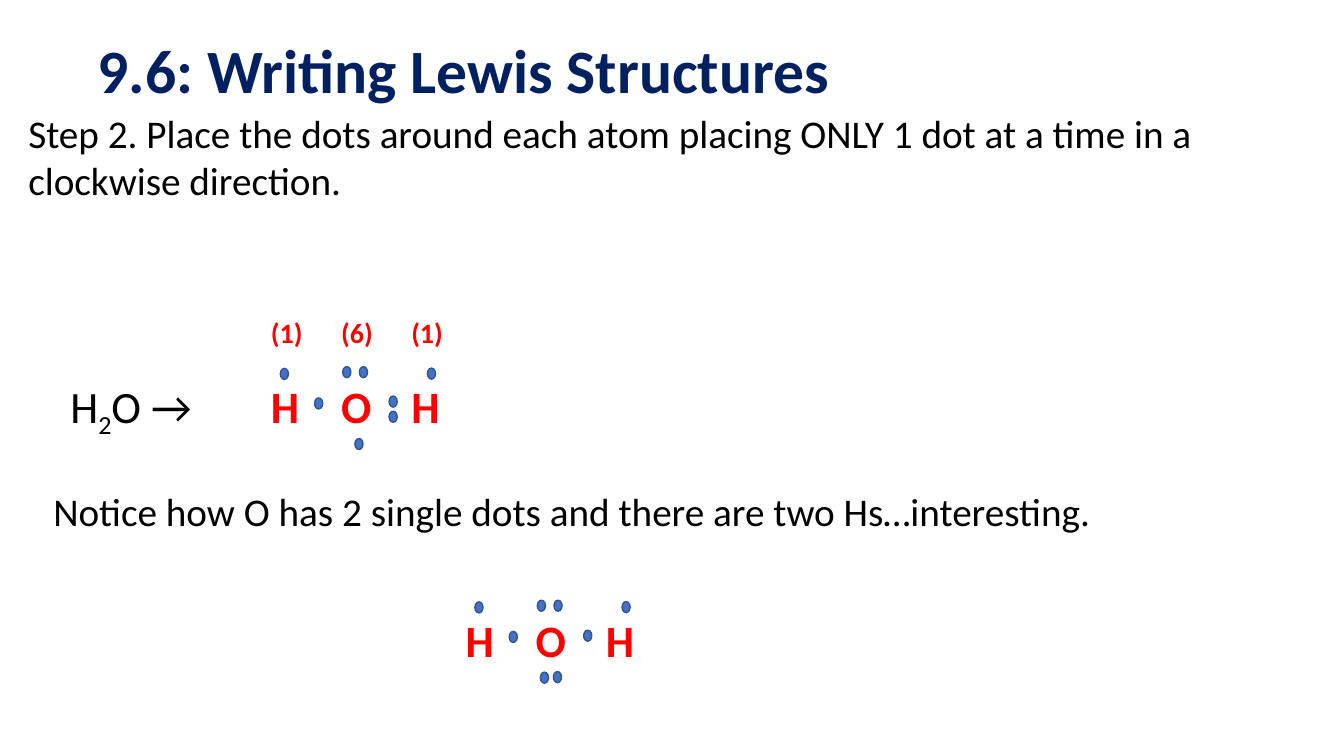
from dataclasses import dataclass

from pptx import Presentation
from pptx import util as u
from pptx.dml import color
from pptx.enum import shapes, text
from pptx.oxml import xmlchemy

Pt = u.Pt


@dataclass(frozen=True)
class Theme:
    font: str = "Calibri"
    navy: str = "002060"
    ink: str = "000000"
    red: str = "FF0000"
    dot_fill: str = "4472C4"
    dot_line: str = "325491"
    title: int = 44
    prose: int = 28
    symbol: int = 32
    count: int = 20


@dataclass(frozen=True)
class Box:
    left: float
    top: float
    width: float
    height: float

    def place(self, item):
        item.left, item.top = Pt(self.left), Pt(self.top)
        item.width, item.height = Pt(self.width), Pt(self.height)


THEME = Theme()
ATOM_STEP = 50.1
ATOM_WIDTH, ATOM_HEIGHT = 41, 46
COUNT_RISE, COUNT_HEIGHT = 45.4, 31.5
DOT_WIDTH, DOT_HEIGHT = 5.8, 7.9
SHARED_DOTS = [(13.7, -4), (38.2, 17.1), (58.3, -5.2), (70.2, -5.2), (118.8, -4.2)]
FIRST_DOTS = [(91.4, 15.8), (91.4, 26.6), (67, 46.1)]
PAIRED_DOTS = [(91.4, 16.2), (60.5, 46.2), (69.8, 45.8)]


def rgb(value):
    return color.RGBColor.from_string(value)


def add_span(para, words, size, ink, bold=False, baseline=0):
    span = para.add_run()
    span.text = words
    span.font.name = THEME.font
    span.font.size = Pt(size)
    span.font.bold = bold
    span.font.color.rgb = rgb(ink)
    if baseline:
        span.font._element.set("baseline", str(baseline))


def add_text(page, box, spans, size, ink, bold=False):
    item = page.shapes.add_textbox(0, 0, 0, 0)
    box.place(item)
    item.text_frame.word_wrap = True
    para = item.text_frame.paragraphs[0]
    for words, baseline in spans:
        add_span(para, words, size, ink, bold, baseline)


def add_title(page, box):
    title = page.shapes.title
    box.place(title)
    frame = title.text_frame
    frame.vertical_anchor = text.MSO_ANCHOR.MIDDLE
    para = frame.paragraphs[0]
    para.alignment = text.PP_ALIGN.LEFT
    para.line_spacing = 0.9
    add_span(para, "9.6: Writing Lewis Structures", THEME.title, THEME.navy, True)


def add_step(page, box):
    body = page.placeholders[1]
    box.place(body)
    frame = body.text_frame
    frame.auto_size = text.MSO_AUTO_SIZE.NONE
    para = frame.paragraphs[0]
    para.space_before = Pt(0)
    settings = para._p.get_or_add_pPr()
    settings.set("marL", "0")
    settings.set("indent", "0")
    settings.append(xmlchemy.OxmlElement("a:buNone"))
    add_span(
        para,
        "Step 2. Place the dots around each atom placing ONLY 1 dot at a time "
        "in a clockwise direction.",
        THEME.prose,
        THEME.ink,
    )


def add_dot(page, left, top):
    dot = page.shapes.add_shape(shapes.MSO_SHAPE.OVAL, 0, 0, 0, 0)
    Box(left, top, DOT_WIDTH, DOT_HEIGHT).place(dot)
    dot.shadow.inherit = False
    dot.fill.solid()
    dot.fill.fore_color.rgb = rgb(THEME.dot_fill)
    dot.line.color.rgb = rgb(THEME.dot_line)
    dot.line.width = Pt(1)


def add_molecule(page, box, dots, counts=()):
    for index, symbol in enumerate("HOH"):
        left = box.left + index * ATOM_STEP
        atom = Box(left, box.top, ATOM_WIDTH, box.height)
        add_text(page, atom, [(symbol, 0)], THEME.symbol, THEME.red, True)
    for index, count in enumerate(counts):
        left = box.left + index * ATOM_STEP
        label = Box(left, box.top - COUNT_RISE, ATOM_WIDTH, COUNT_HEIGHT)
        add_text(page, label, [(f"({count})", 0)], THEME.count, THEME.red, True)
    for across, down in SHARED_DOTS + dots:
        add_dot(page, box.left + across, box.top + down)


def build_lewis_page(deck):
    page = deck.slides.add_slide(deck.slide_layouts[1])
    add_title(page, Box(62.6, 0, 828, 104.4))
    add_step(page, Box(13, 74.2, 892, 75))
    formula = [("H", 0), ("2", -25000), ("O →", 0)]
    add_text(page, Box(43.2, 267.1, 116, 46), formula, THEME.symbol, THEME.ink)
    width = 2 * ATOM_STEP + ATOM_WIDTH
    add_molecule(page, Box(186.5, 267.1, width, ATOM_HEIGHT), FIRST_DOTS, (1, 6, 1))
    notice = "Notice how O has 2 single dots and there are two Hs…interesting."
    add_text(page, Box(31, 344.9, 760, 41), [(notice, 0)], THEME.prose, THEME.ink)
    add_molecule(page, Box(325.5, 433.9, width, ATOM_HEIGHT), PAIRED_DOTS)


def main():
    deck = Presentation()
    deck.slide_width, deck.slide_height = Pt(960), Pt(540)
    build_lewis_page(deck)
    deck.save("out.pptx")


if __name__ == "__main__":
    main()
